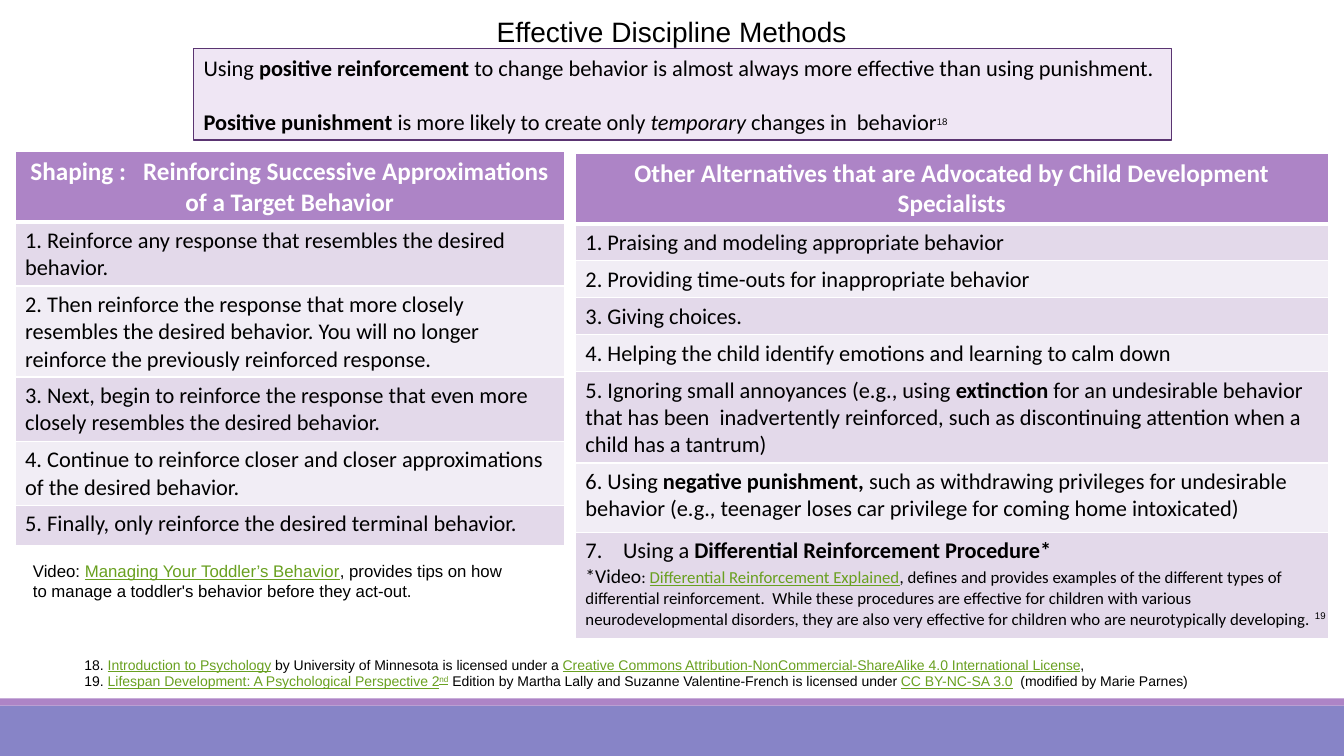
from lxml.etree import SubElement
from pptx import Presentation
from pptx.dml.color import RGBColor
from pptx.enum.shapes import MSO_SHAPE as Shape
from pptx.enum.text import PP_ALIGN as Align
from pptx.oxml.ns import qn
from pptx.util import Cm, Pt

BLACK, WHITE, LINK = "000000", "FFFFFF", "69A020"
PURPLE, BLUE, PALE, EDGE = "AD84C6", "8784C7", "EFE6F4", "5A3471"
BANDS = ["E3D9EA", "F1EDF5"]

# A paragraph is a list of runs: plain text, or (text, marks[, size[, font]]).
# Marks: b bold, i italic, u link, ^ superscript.
TITLE = [["Effective Discipline Methods"]]
BANNER = [
    ["Using ", ("positive reinforcement ", "b"),
     "to change behavior is almost always more effective than using punishment."],
    [("Positive punishment ", "b"), "is more likely to create only ",
     ("temporary", "i"), " changes in  behavior", ("18", "^", 12, "Arial")],
]
VIDEO_NOTE = [["Video: ", ("Managing Your Toddler’s Behavior", "u"),
               ", provides tips on how to manage a toddler's behavior before they act-out."]]
CITATION_MARK = [[("19", "^")]]
FOOTNOTES = [
    ["18. ", ("Introduction to Psychology", "u"),
     " by University of Minnesota is licensed under a ",
     ("Creative Commons Attribution-NonCommercial-ShareAlike 4.0 International License", "u"),
     ","],
    ["19. ", ("Lifespan Development: A Psychological Perspective 2", "u"), ("nd", "u^"),
     " Edition by Martha Lally and Suzanne Valentine-French is licensed under ",
     ("CC BY-NC-SA 3.0", "u"), "  (modified by Marie Parnes)"],
]

# Table rows: height in cm, then the paragraphs of the cell.
SHAPING = [
    (1.75, [["Shaping :   Reinforcing Successive Approximations of a Target Behavior"]]),
    (1.62, [["1. Reinforce any response that resembles the desired behavior."]]),
    (2.29, [["2. Then reinforce the response that more closely resembles the desired "
             "behavior. You will no longer reinforce the previously reinforced response."]]),
    (1.62, [["3. Next, begin to reinforce the response that even more closely resembles "
             "the desired behavior."]]),
    (1.62, [["4. Continue to reinforce closer and closer approximations of the desired "
             "behavior."]]),
    (1.02, [["5. Finally, only reinforce the desired terminal behavior."]]),
]
ALTERNATIVES = [
    (1.78, [["Other Alternatives that are Advocated by Child Development Specialists"]]),
    (0.93, [["1. Praising and modeling appropriate behavior"]]),
    (0.93, [["2. Providing time-outs for inappropriate behavior"]]),
    (0.93, [["3. Giving choices."]]),
    (0.93, [["4. Helping the child identify emotions and learning to calm down"]]),
    (2.3, [["5. Ignoring small annoyances (e.g., using ", ("extinction", "b"),
            " for an undesirable behavior that has been  inadvertently reinforced, such as "
            "discontinuing attention when a child has a tantrum)"]]),
    (1.75, [["6. Using ", ("negative punishment, ", "b"),
             "such as withdrawing privileges for undesirable behavior (e.g., teenager "
             "loses car privilege for coming home intoxicated)"]]),
    (2.67, [["Using a ", ("Differential Reinforcement Procedure*", "b")],
            [("*Video", "", 14), (": ", "", 12),
             ("Differential Reinforcement Explained", "u", 12),
             (", defines and provides examples of the different types of differential "
              "reinforcement.  While these procedures are effective for children with "
              "various neurodevelopmental disorders, they are also very effective for "
              "children who are neurotypically developing.", "", 12)]]),
]


def color(value):
    return RGBColor.from_string(value)


def write(frame, paragraphs, size, font="Arial", ink=BLACK, bold=False, align=Align.LEFT):
    frame.word_wrap = True
    for index, runs in enumerate(paragraphs):
        paragraph = frame.paragraphs[0] if index == 0 else frame.add_paragraph()
        paragraph.alignment = align
        for item in runs:
            text, marks, *special = (item, "") if isinstance(item, str) else item
            run = paragraph.add_run()
            run.text = text
            run.font.size = Pt(special[0] if special else size)
            run.font.name = special[1] if len(special) > 1 else font
            run.font.bold = bold or "b" in marks
            run.font.italic = "i" in marks
            run.font.underline = "u" in marks
            run.font.color.rgb = color(LINK if "u" in marks else ink)
            if "^" in marks:
                run.font._element.set("baseline", "30000")


def add_text(slide, box, paragraphs, size, **style):
    shape = slide.shapes.add_textbox(*map(Cm, box))
    write(shape.text_frame, paragraphs, size, **style)


def add_box(slide, box, fill, line=None):
    shape = slide.shapes.add_shape(Shape.RECTANGLE, *map(Cm, box))
    shape.shadow.inherit = False
    shape.fill.solid()
    shape.fill.fore_color.rgb = color(fill)
    if line:
        shape.line.color.rgb = color(line)
        shape.line.width = Pt(0.75)
    else:
        shape.line.fill.background()
    return shape


def add_borders(cell, top, bottom):
    """White cell borders; must run before the cell is filled."""
    properties = cell._tc.get_or_add_tcPr()
    for side, width in (("L", 1), ("R", 1), ("T", top), ("B", bottom)):
        line = SubElement(properties, qn(f"a:ln{side}"), w=str(Pt(width)))
        SubElement(SubElement(line, qn("a:solidFill")), qn("a:srgbClr"), val=WHITE)


def add_methods(slide, left, top, width, rows):
    total = sum(height for height, _ in rows)
    table = slide.shapes.add_table(len(rows), 1, *map(Cm, (left, top, width, total))).table
    for index, (height, paragraphs) in enumerate(rows):
        table.rows[index].height = Cm(height)
        cell = table.cell(index, 0)
        header = index == 0
        add_borders(cell, 3 if index == 1 else 1, 3 if header else 1)
        cell.fill.solid()
        cell.fill.fore_color.rgb = color(PURPLE if header else BANDS[(index - 1) % 2])
        if header:
            write(cell.text_frame, paragraphs, 18, "Calibri", WHITE, True, Align.CENTER)
        else:
            write(cell.text_frame, paragraphs, 16, "Calibri")
    return table


def number_from(paragraph, start):
    properties = paragraph._p.get_or_add_pPr()
    properties.set("marL", str(Cm(0.95)))
    properties.set("indent", str(-Cm(0.95)))
    SubElement(properties, qn("a:buFont"), typeface="+mj-lt")
    SubElement(properties, qn("a:buAutoNum"), type="arabicPeriod", startAt=str(start))


def main():
    presentation = Presentation()
    presentation.slide_width, presentation.slide_height = Cm(33.87), Cm(19.05)
    slide = presentation.slides.add_slide(presentation.slide_layouts[6])

    add_box(slide, (0, 17.78, 33.87, 1.27), BLUE)
    add_box(slide, (0, 17.6, 33.87, 0.18), PURPLE)
    add_text(slide, (1.88, 16.41, 29.16, 1.12), FOOTNOTES, 10)
    add_text(slide, (9.22, 0.23, 15.42, 1.12), TITLE, 20, align=Align.CENTER)

    banner = add_box(slide, (4.88, 1.22, 24.64, 2.31), PALE, EDGE)
    write(banner.text_frame, BANNER, 16, "Calibri")
    banner.text_frame.paragraphs[1].space_before = Pt(19.5)

    add_methods(slide, 0.38, 3.81, 13.84, SHAPING)
    alternatives = add_methods(slide, 14.5, 3.86, 18.97, ALTERNATIVES)
    last_cell = alternatives.cell(len(ALTERNATIVES) - 1, 0)
    number_from(last_cell.text_frame.paragraphs[0], 7)

    add_text(slide, (32.89, 15.19, 0.96, 0.61), CITATION_MARK, 12)
    add_text(slide, (0.58, 14, 12.75, 1.27), VIDEO_NOTE, 12)
    presentation.save("out.pptx")


if __name__ == "__main__":
    main()
